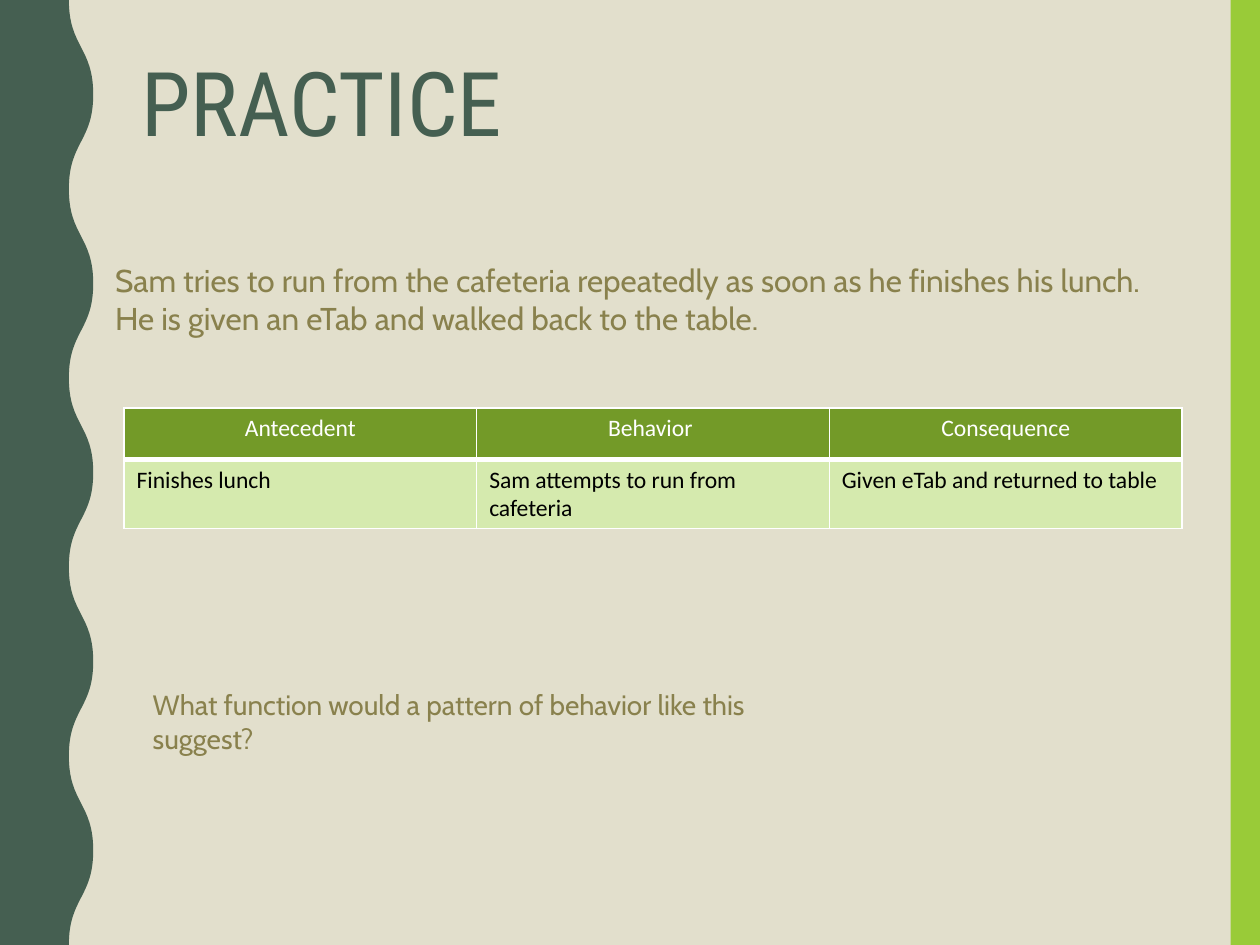
from dataclasses import dataclass

from lxml.etree import SubElement
from pptx import Presentation
from pptx.dml.color import RGBColor
from pptx.enum.shapes import MSO_SHAPE
from pptx.enum.text import PP_ALIGN
from pptx.oxml.ns import qn
from pptx.util import Cm, Pt


@dataclass(frozen=True)
class Theme:
    sand: str = "E2DFCC"
    pine: str = "455F51"
    lime: str = "99CB38"
    olive: str = "89814D"
    leaf: str = "739A28"
    mint: str = "D5EAAE"
    white: str = "FFFFFF"
    black: str = "000000"
    head: str = "Roboto Condensed"
    body: str = "Cabin"
    grid: str = "Calibri"
    title: float = 51
    story: float = 18
    ask: float = 16
    cell: float = 13.5


THEME = Theme()
WIDE, HIGH = 25.4, 19.05
ROWS = [
    ["Antecedent", "Behavior ", "Consequence"],
    [
        "Finishes lunch",
        "Sam attempts to run from cafeteria",
        "Given eTab and returned to table",
    ],
]


def apply(thing, form):
    for name, value in form.items():
        setattr(thing, name, value)


def paint(fill, color):
    fill.solid()
    fill.fore_color.rgb = RGBColor.from_string(color)


def finish(shape, color):
    """Give a shape a flat fill with no outline or shadow."""
    paint(shape.fill, color)
    shape.line.fill.background()
    shape.shadow.inherit = False


def write(frame, text, font, size, color, **form):
    """Put one formatted paragraph in a text frame."""
    para = frame.paragraphs[0]
    apply(para, form)
    run = para.add_run()
    run.text = text
    apply(run.font, {"name": font, "size": Pt(size)})
    run.font.color.rgb = RGBColor.from_string(color)


def add_text(slide, box, text, font, size, color, **form):
    frame = slide.shapes.add_textbox(*map(Cm, box)).text_frame
    frame.word_wrap = True
    write(frame, text, font, size, color, **form)


def bend(line, start, end):
    """Turn a straight segment into an S curve with upright ends."""
    mid = (start[1] + end[1]) // 2
    line.tag = qn("a:cubicBezTo")
    line.remove(line[0])
    for x, y in ((start[0], mid), (end[0], mid), end):
        SubElement(line, qn("a:pt"), x=str(x), y=str(y))


def add_wave(slide, low=1.39, high=1.88, halves=10):
    """Draw the left band, its edge swinging between low and high."""
    span = HIGH / halves
    edge = [
        (Cm(high if k % 2 else low), Cm(k * span)) for k in range(halves + 1)
    ]
    pen = slide.shapes.build_freeform(*edge[0])
    pen.add_line_segments([*edge[1:], (0, Cm(HIGH)), (0, 0)], close=True)
    band = pen.convert_to_shape()
    lines = list(band._element.iter(qn("a:lnTo")))
    for line, start, end in zip(lines, edge, edge[1:]):
        bend(line, start, end)
    finish(band, THEME.pine)


def add_edge(cell, side, width):
    props = cell._tc.get_or_add_tcPr()
    line = SubElement(props, qn(f"a:ln{side}"), w=str(Pt(width)))
    fill = SubElement(line, qn("a:solidFill"))
    SubElement(fill, qn("a:srgbClr"), val=THEME.white)


def add_grid(slide, left, top, width, heights):
    shape = slide.shapes.add_table(
        len(ROWS), len(ROWS[0]), Cm(left), Cm(top), Cm(width), Cm(sum(heights))
    )
    table = shape.table
    apply(table, {"first_row": False, "horz_banding": False})
    looks = [
        (THEME.leaf, THEME.white, PP_ALIGN.CENTER, {"B": 3}),
        (THEME.mint, THEME.black, PP_ALIGN.LEFT, {"T": 3}),
    ]
    for r, (words, look, height) in enumerate(zip(ROWS, looks, heights)):
        back, ink, align, thick = look
        table.rows[r].height = Cm(height)
        for c, text in enumerate(words):
            cell = table.cell(r, c)
            for side in "LRTB":
                add_edge(cell, side, thick.get(side, 1))
            paint(cell.fill, back)
            write(cell.text_frame, text, THEME.grid, THEME.cell, ink,
                  alignment=align)


def main():
    deck = Presentation()
    apply(deck, {"slide_width": Cm(WIDE), "slide_height": Cm(HIGH)})
    slide = deck.slides.add_slide(deck.slide_layouts[6])
    paint(slide.background.fill, THEME.sand)

    bar = slide.shapes.add_shape(
        MSO_SHAPE.RECTANGLE, Cm(24.81), 0, Cm(WIDE - 24.81), Cm(HIGH)
    )
    finish(bar, THEME.lime)
    add_wave(slide)

    add_text(
        slide, (2.07, 5.14, 22.2, 1.8),
        "Sam tries to run from the cafeteria repeatedly as soon as he "
        "finishes his lunch.  He is given an eTab and walked back to the table.",
        THEME.body, THEME.story, THEME.olive,
    )
    add_grid(slide, 2.5, 8.22, 21.33, (1.04, 0.84))
    add_text(
        slide, (2.83, 13.74, 14.43, 0.94),
        "What function would a pattern of behavior like this suggest?",
        THEME.body, THEME.ask, THEME.olive,
    )
    add_text(
        slide, (2.6, 1.07, 21.21, 4.14), "PRACTICE",
        THEME.head, THEME.title, THEME.pine, line_spacing=0.9,
    )
    deck.save("out.pptx")


if __name__ == "__main__":
    main()
